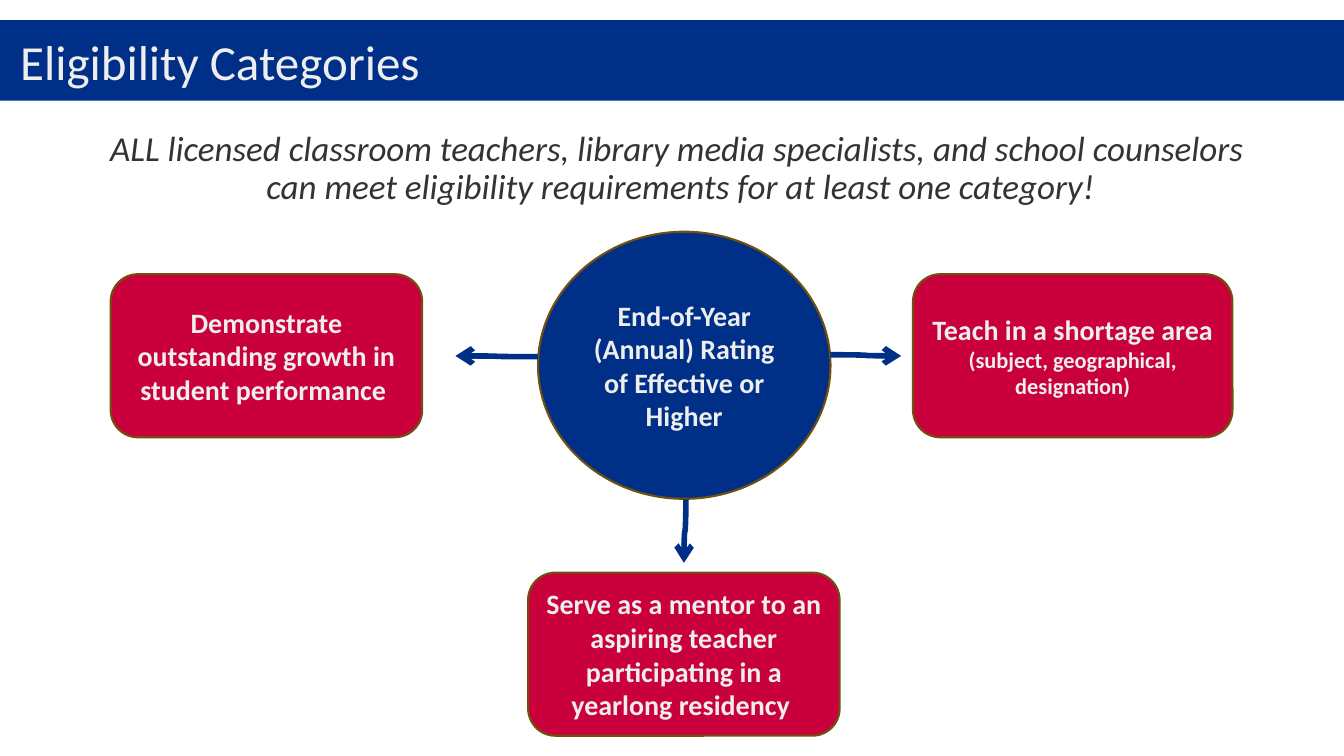
from lxml.etree import SubElement
from pptx import Presentation
from pptx.dml.color import RGBColor
from pptx.enum.shapes import MSO_CONNECTOR as CONN, MSO_SHAPE as SHAPE
from pptx.enum.text import MSO_ANCHOR as ANCHOR, PP_ALIGN as ALIGN
from pptx.oxml.ns import qn
from pptx.util import Cm, Pt

BLUE = RGBColor(0x00, 0x2F, 0x87)
RED = RGBColor(0xCA, 0x00, 0x3D)
BROWN = RGBColor(0x70, 0x50, 0x0C)
LIGHT = RGBColor(0xEE, 0xEE, 0xEE)
DARK = RGBColor(0x33, 0x33, 0x33)

BOX_TOP, BOX_WIDTH, BOX_HEIGHT = 6.91, 7.85, 4.11


def write(tf, lines, color, align=ALIGN.CENTER, bold=False, italic=False):
    """Fill a text frame with one paragraph per (text, size) pair."""
    tf.word_wrap = True
    tf.vertical_anchor = ANCHOR.MIDDLE
    for i, (text, size) in enumerate(lines):
        p = tf.add_paragraph() if i else tf.paragraphs[0]
        p.text = text
        p.alignment = align
        for r in p.runs:
            r.font.name = "Calibri"
            r.font.size = Pt(size)
            r.font.bold = bold
            r.font.italic = italic
            r.font.color.rgb = color


def add_filled(s, kind, x, y, w, h, fill):
    sp = s.shapes.add_shape(kind, Cm(x), Cm(y), Cm(w), Cm(h))
    sp.shadow.inherit = False
    sp.fill.solid()
    sp.fill.fore_color.rgb = fill
    sp.line.fill.background()
    return sp


def add_node(s, kind, x, y, w, h, fill, lines):
    sp = add_filled(s, kind, x, y, w, h, fill)
    sp.line.color.rgb = BROWN
    sp.line.width = Pt(1.5)
    write(sp.text_frame, lines, LIGHT, bold=True)


def add_text(s, x, y, w, h, inset_x, inset_y):
    tf = s.shapes.add_textbox(Cm(x), Cm(y), Cm(w), Cm(h)).text_frame
    tf.margin_left = tf.margin_right = Cm(inset_x)
    tf.margin_top = tf.margin_bottom = Cm(inset_y)
    return tf


def add_arrow(s, x1, y1, x2, y2, degrees=0):
    """Draw a curved arrow, turned clockwise about its centre."""
    c = s.shapes.add_connector(CONN.CURVE, Cm(x1), Cm(y1), Cm(x2), Cm(y2))
    c.line.color.rgb = BLUE
    c.line.width = Pt(4)
    spPr = c._element.spPr
    if degrees:
        spPr.find(qn("a:xfrm")).set("rot", str(degrees * 60000))
    SubElement(spPr.find(qn("a:ln")), qn("a:tailEnd"), type="arrow")
    SubElement(spPr, qn("a:effectLst"))


def add_heading(s):
    add_filled(s, SHAPE.RECTANGLE, 0, 0.51, 33.87, 2.03, BLUE)
    tf = add_text(s, 0, 0.51, 30.48, 2.03, 0.51, 0.25)
    write(tf, [("Eligibility Categories", 35)], LIGHT, ALIGN.LEFT)


def add_statement(s):
    tf = add_text(s, 0.43, 3.05, 33.02, 2.41, 0.51, 0.51)
    write(tf, [
        ("ALL licensed classroom teachers, library media specialists, "
         "and school counselors ", 25),
        ("can meet eligibility requirements for at least one category!", 25),
    ], DARK, italic=True)
    for p in tf.paragraphs:
        p.line_spacing = 0.9
        pPr = p._p.get_or_add_pPr()
        pPr.set("marL", str(Cm(0.41)))
        pPr.set("indent", "0")


def add_diagram(s):
    categories = [
        (2.79, BOX_TOP, BOX_WIDTH,
         [("Demonstrate outstanding growth in student performance ", 20)]),
        (13.31, 14.43, BOX_WIDTH,
         [("Serve as a mentor to an aspiring teacher participating "
           "in a yearlong residency\u00a0", 20)]),
        (23.01, BOX_TOP, 8.05,
         [("Teach in a shortage area ", 20),
          ("(subject, geographical, designation)", 16)]),
    ]
    for x, y, w, lines in categories:
        add_node(s, SHAPE.ROUNDED_RECTANGLE, x, y, w, BOX_HEIGHT, RED, lines)
    add_node(s, SHAPE.OVAL, 13.56, 5.84, 7.37, 6.73, BLUE,
             [("End-of-Year (Annual) Rating ", 20),
              ("of Effective or Higher", 20)])
    add_arrow(s, 16.46, 13.36, 18.06, 13.41, degrees=90)
    add_arrow(s, 13.56, 8.99, 11.48, 8.97)
    add_arrow(s, 20.93, 8.94, 22.71, 8.97)


def main():
    prs = Presentation()
    prs.slide_width, prs.slide_height = Cm(33.87), Cm(19.05)
    s = prs.slides.add_slide(prs.slide_layouts[6])
    add_heading(s)
    add_statement(s)
    add_diagram(s)
    prs.save("out.pptx")


if __name__ == "__main__":
    main()
